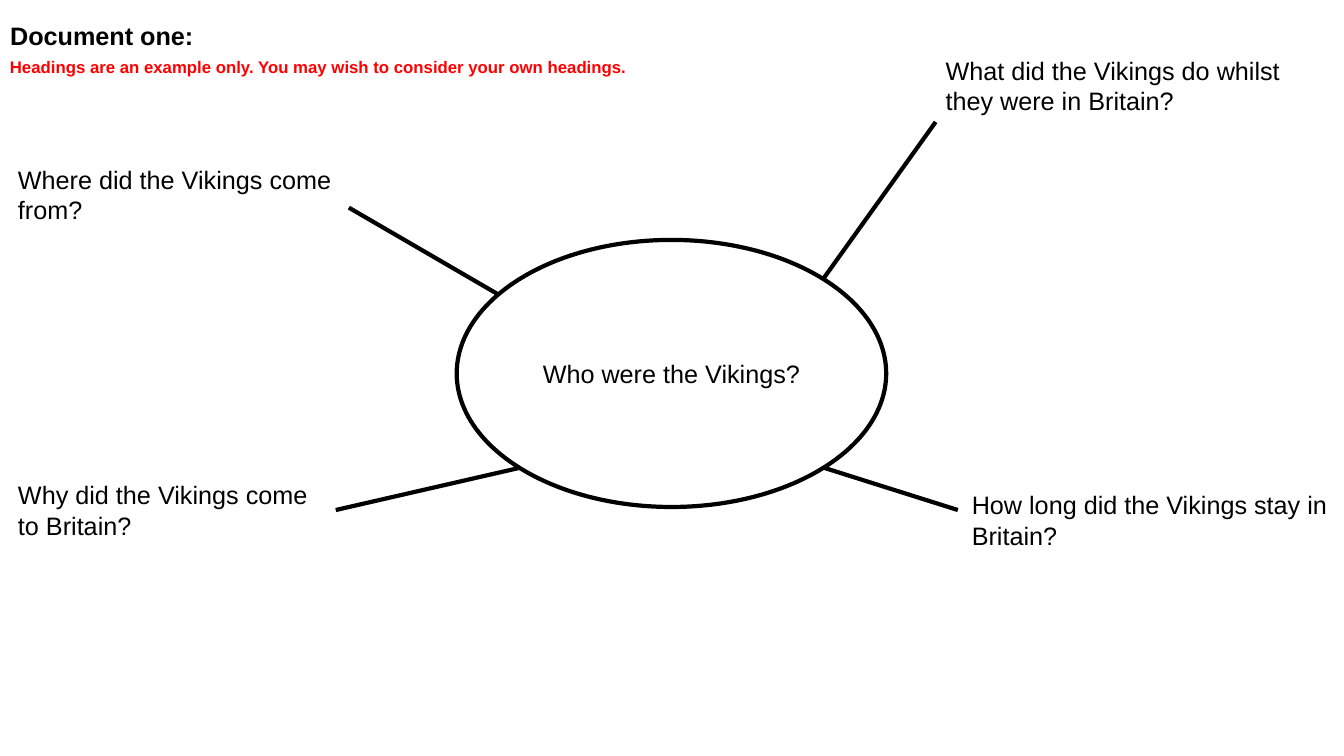
from pptx import Presentation
from pptx.dml.color import RGBColor
from pptx.enum.shapes import MSO_CONNECTOR, MSO_SHAPE
from pptx.enum.text import MSO_ANCHOR as ANCHOR, MSO_AUTO_SIZE as AUTO, PP_ALIGN as ALIGN
from pptx.oxml.ns import qn
from pptx.util import Pt
from lxml.etree import SubElement

PX = 9144  # 100 px to the inch
COLORS = {"ink": "000000", "paper": "FFFFFF", "note": "FF0000"}


def rgb(name):
    return RGBColor.from_string(COLORS[name])


def write(sp, text, size=18, color="ink", bold=False, align=ALIGN.LEFT):
    tf = sp.text_frame
    tf.word_wrap = True
    tf.text = text
    p = tf.paragraphs[0]
    p.alignment = align
    font = p.runs[0].font
    font.name, font.size, font.bold = "Arial", Pt(size), bold
    font.color.rgb = rgb(color)
    return tf


prs = Presentation()
prs.slide_width, prs.slide_height = 1333 * PX, 750 * PX
s = prs.slides.add_slide(prs.slide_layouts[5])

# Title, raised above the middle to leave room for the note
title = s.shapes.title
title.left, title.top, title.width, title.height = 0, 0, 1333 * PX, 100 * PX
tf = write(title, "Document one:", bold=True)
tf.auto_size = AUTO.NONE
tf.vertical_anchor = ANCHOR.MIDDLE
tf.margin_bottom = 30 * PX
tf.paragraphs[0].line_spacing = 0.9

# Central question
hub = s.shapes.add_shape(MSO_SHAPE.OVAL, 453 * PX, 238 * PX, 426 * PX, 265 * PX)
hub.shadow.inherit = False
hub.fill.solid()
hub.fill.fore_color.rgb = rgb("paper")
hub.line.color.rgb = rgb("ink")
hub.line.width = Pt(3)
tf = write(hub, "Who were the Vikings?", align=ALIGN.CENTER)
tf.vertical_anchor = ANCHOR.MIDDLE

# Branches: heading, left, top, width, line start, line end
branches = [
    ("Where did the Vikings come from?", 8, 158, 350, (494, 292), (346, 206)),
    ("Why did the Vikings come to Britain?", 8, 471, 325, (516, 464), (333, 506)),
    ("How long did the Vikings stay in Britain?", 954, 481, 376, (817, 464), (950, 506)),
    ("What did the Vikings do whilst they were in Britain?", 928, 50, 403, (817, 276), (928, 121)),
]
for heading, left, top, width, start, end in branches:
    spoke = s.shapes.add_connector(
        MSO_CONNECTOR.STRAIGHT, *(v * PX for v in start + end))
    spoke.line.color.rgb = rgb("ink")
    spoke.line.width = Pt(3)
    SubElement(spoke._element.spPr, qn("a:effectLst"))
    box = s.shapes.add_textbox(left * PX, top * PX, width * PX, 71 * PX)
    write(box, heading).auto_size = AUTO.SHAPE_TO_FIT_TEXT

# Note under the title
note = s.shapes.add_textbox(0, 51 * PX, 797 * PX, 30 * PX)
tf = write(note, "Headings are an example only. You may wish to consider your own headings.",
           size=12, color="note", bold=True)
tf.auto_size = AUTO.SHAPE_TO_FIT_TEXT

prs.save("out.pptx")
